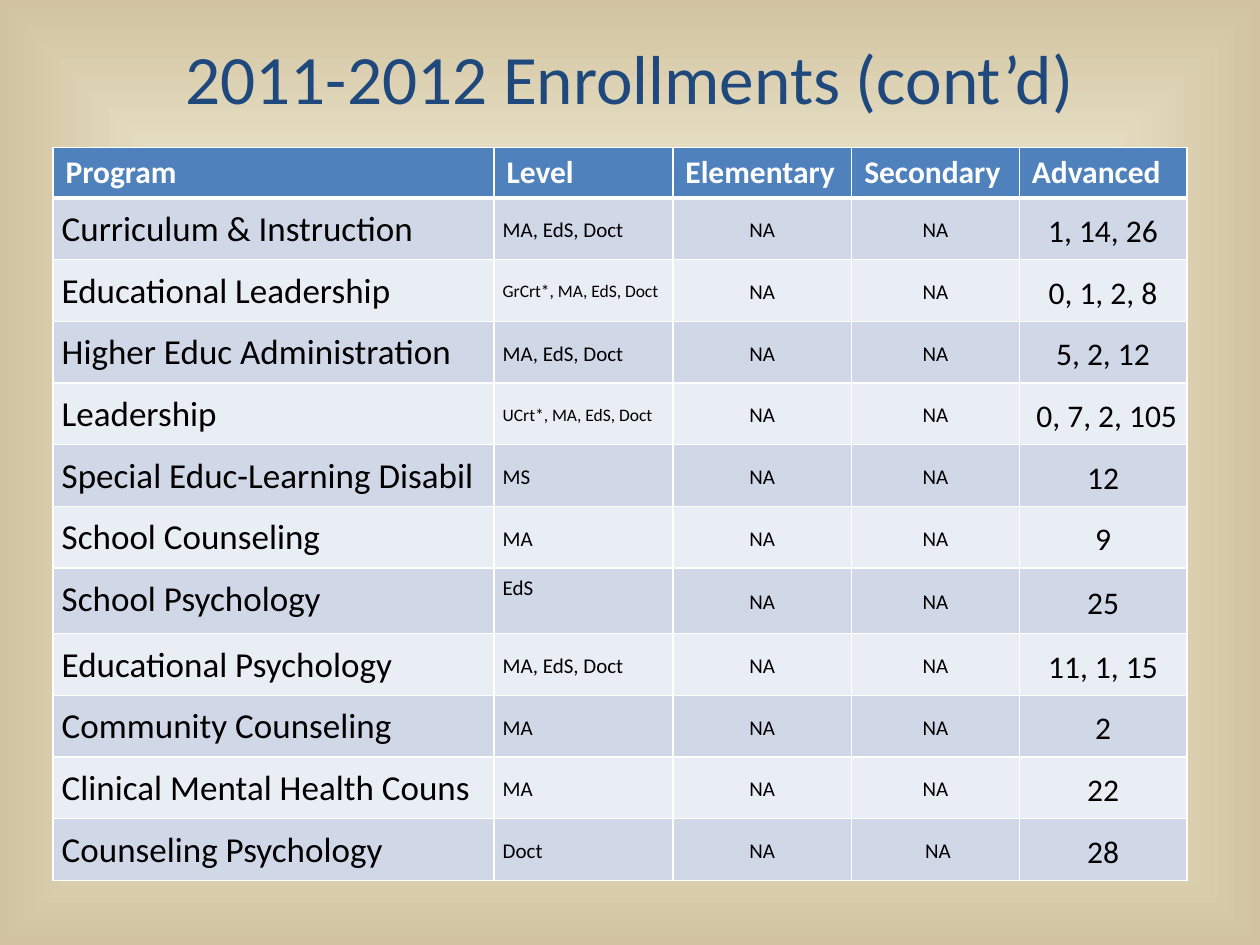
from lxml import etree
from pptx import Presentation
from pptx.dml.color import RGBColor
from pptx.enum import text as t
from pptx.oxml import ns
from pptx.util import Inches, Pt

HEADERS = ["Program", "Level", "Elementary", "Secondary", "Advanced"]
ENROLLMENTS = [
    ("Curriculum & Instruction", "MA, EdS, Doct", "1, 14, 26"),
    ("Educational Leadership", "GrCrt*, MA, EdS, Doct", "0, 1, 2, 8"),
    ("Higher Educ Administration", "MA, EdS, Doct", "5, 2, 12"),
    ("Leadership", "UCrt*, MA, EdS, Doct", "0, 7, 2, 105"),
    ("Special Educ-Learning Disabil", "MS", "12"),
    ("School Counseling", "MA", "9"),
    ("School Psychology", "EdS", "25"),
    ("Educational Psychology", "MA, EdS, Doct", "11, 1, 15"),
    ("Community Counseling", "MA", "2"),
    ("Clinical Mental Health Couns", "MA", "22"),
    ("Counseling Psychology", "Doct", "28"),
]
COL_WIDTHS = [3.5, 1.42, 1.42, 1.33, 1.33]
BODY_SIZES = [20, 12, 12, 12, 18]
HEADER_HEIGHT, ROW_HEIGHT, TALL_HEIGHT = 0.4, 0.49, 0.52
TALL_ROW = 7
LEFT_INDENTS = {(4, 4): 0.13, (11, 3): 0.11}


def rgb(value):
    return RGBColor.from_string(value)


class EnrollmentSlide:
    font = "Calibri"
    title_color = "1F497D"
    header_fill = "4F81BD"
    band_fills = ("E9EDF4", "D0D8E8")
    line_color = "FFFFFF"

    def __init__(self, prs):
        self.s = prs.slides.add_slide(prs.slide_layouts[6])

    def background(self, stops):
        """Fill the background with a gradient that runs out from the centre."""
        fill = self.s.background.fill
        fill.gradient()
        grad = self.s.background._cSld.find(".//" + ns.qn("a:gradFill"))
        for child in list(grad):
            grad.remove(child)
        stop_list = etree.SubElement(grad, ns.qn("a:gsLst"))
        for position, color in stops:
            stop = etree.SubElement(stop_list, ns.qn("a:gs"), pos=str(position * 1000))
            etree.SubElement(stop, ns.qn("a:srgbClr"), val=color)
        shape_path = etree.SubElement(grad, ns.qn("a:path"), path="shape")
        etree.SubElement(shape_path, ns.qn("a:fillToRect"),
                         {side: "50000" for side in "ltrb"})

    def style(self, p, size, color, align, bold=False):
        p.alignment = align
        p.font.name = self.font
        p.font.size = Pt(size)
        p.font.bold = bold
        p.font.color.rgb = rgb(color)

    def title(self, text, left, top, width, height):
        sp = self.s.shapes.add_textbox(Inches(left), Inches(top),
                                       Inches(width), Inches(height))
        tf = sp.text_frame
        tf.word_wrap = True
        tf.vertical_anchor = t.MSO_ANCHOR.MIDDLE
        p = tf.paragraphs[0]
        p.text = text
        self.style(p, 39.6, self.title_color, t.PP_ALIGN.CENTER)

    def borders(self, cell, top=1, bottom=1):
        tc_pr = cell._tc.get_or_add_tcPr()
        widths = {"lnL": 1, "lnR": 1, "lnT": top, "lnB": bottom}
        for i, (side, width) in enumerate(widths.items()):
            line = etree.Element(ns.qn("a:" + side), w=str(Pt(width)))
            solid = etree.SubElement(line, ns.qn("a:solidFill"))
            etree.SubElement(solid, ns.qn("a:srgbClr"), val=self.line_color)
            tc_pr.insert(i, line)

    def cell(self, cell, text, fill, margins):
        """Set text, fill and margins (left, right, vertical); return the paragraph."""
        cell.fill.solid()
        cell.fill.fore_color.rgb = rgb(fill)
        left, right, vertical = margins
        cell.margin_left, cell.margin_right = Inches(left), Inches(right)
        cell.margin_top = cell.margin_bottom = Inches(vertical)
        p = cell.text_frame.paragraphs[0]
        p.text = text
        return p

    def header_cell(self, cell, text):
        p = self.cell(cell, text, self.header_fill, (0.1, 0.1, 0.05))
        self.style(p, 18, "FFFFFF", t.PP_ALIGN.LEFT, bold=True)
        self.borders(cell, bottom=3)

    def body_cell(self, cell, text, row, col):
        left = LEFT_INDENTS.get((row, col), 0.07)
        p = self.cell(cell, text, self.band_fills[row % 2], (left, 0.07, 0.03))
        size = 10 if "Crt*" in text else BODY_SIZES[col]
        align = t.PP_ALIGN.LEFT if col < 2 else t.PP_ALIGN.CENTER
        self.style(p, size, "000000", align)
        p.line_spacing = 1.15
        at_top = col == 0 or (row, col) == (TALL_ROW, 1)
        cell.vertical_anchor = t.MSO_ANCHOR.TOP if at_top else t.MSO_ANCHOR.MIDDLE
        self.borders(cell, top=3 if row == 1 else 1)

    def table(self, left, top):
        heights = [HEADER_HEIGHT] + [ROW_HEIGHT] * len(ENROLLMENTS)
        heights[TALL_ROW] = TALL_HEIGHT
        tbl = self.s.shapes.add_table(
            len(heights), len(COL_WIDTHS), Inches(left), Inches(top),
            Inches(sum(COL_WIDTHS)), Inches(sum(heights))).table
        for column, width in zip(tbl.columns, COL_WIDTHS):
            column.width = Inches(width)
        for row, height in zip(tbl.rows, heights):
            row.height = Inches(height)
        for col, text in enumerate(HEADERS):
            self.header_cell(tbl.cell(0, col), text)
        for row, (program, level, advanced) in enumerate(ENROLLMENTS, 1):
            for col, text in enumerate((program, level, "NA", "NA", advanced)):
                self.body_cell(tbl.cell(row, col), text, row, col)


def main():
    prs = Presentation()
    prs.slide_width, prs.slide_height = Inches(10), Inches(7.5)
    slide = EnrollmentSlide(prs)
    slide.background([(0, "FFEFD1"), (52, "F0EBD5"), (100, "D1C39F")])
    slide.title("2011-2012 Enrollments (cont’d)", 0.5, 0.3, 9, 0.62)
    slide.table(0.42, 1.17)
    prs.save("out.pptx")


if __name__ == "__main__":
    main()
